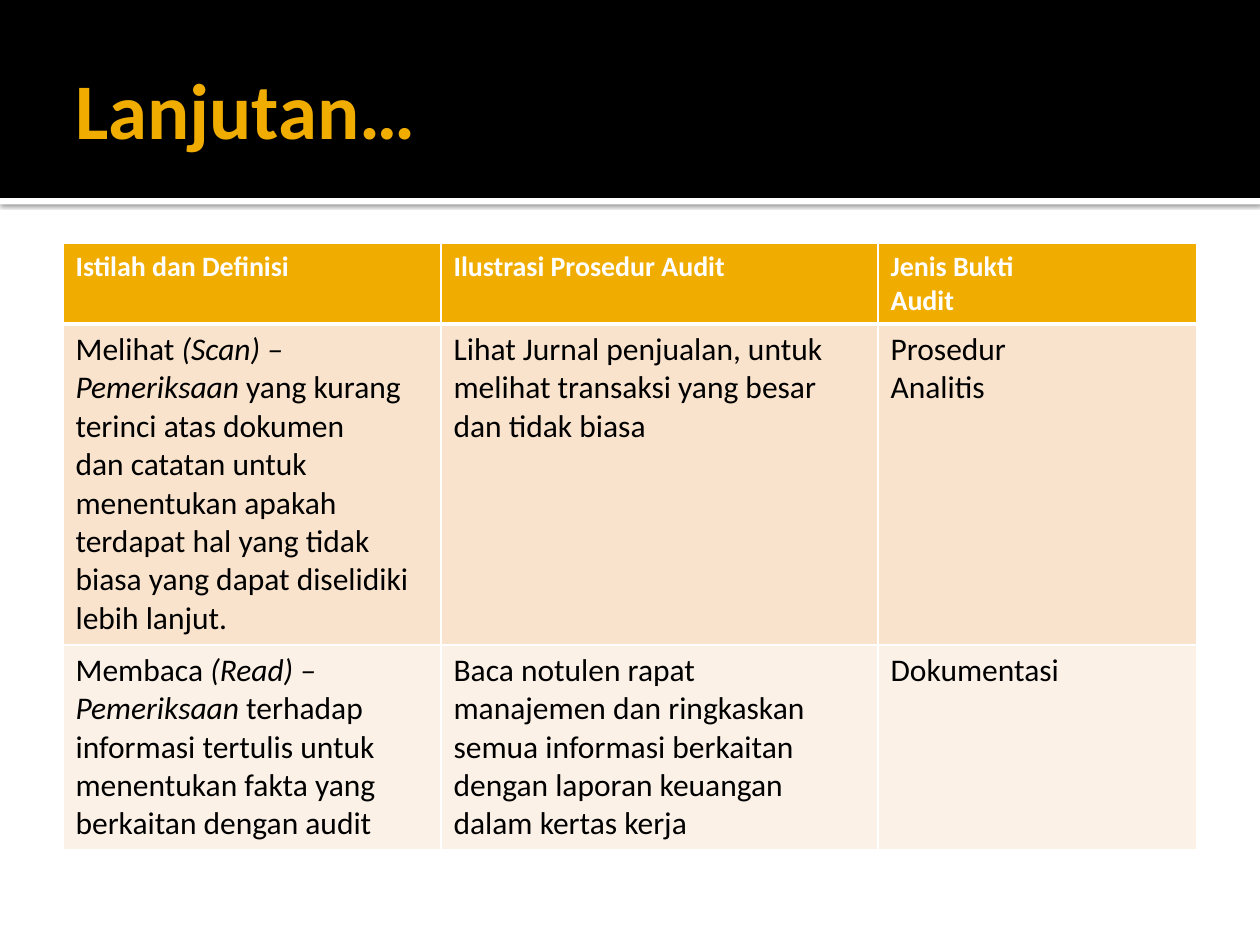
from lxml.etree import SubElement
from pptx import Presentation
from pptx.dml.color import RGBColor as Rgb
from pptx.enum.shapes import MSO_SHAPE as Shape
from pptx.enum.text import MSO_ANCHOR as Anchor
from pptx.oxml import parse_xml
from pptx.oxml.ns import nsdecls, qn
from pptx.util import Cm, Pt

COLORS = {
    "band": "000000",
    "accent": "F0AD00",
    "white": "FFFFFF",
    "text": "000000",
    "row_dark": "F9E3CC",
    "row_light": "FCF1E7",
}
FONT = "Calibri"


def add_bar(top, height, color):
    bar = slide.shapes.add_shape(Shape.RECTANGLE, 0, Cm(top), deck.slide_width, Cm(height))
    bar.shadow.inherit = False
    bar.fill.solid()
    bar.fill.fore_color.rgb = Rgb.from_string(COLORS[color])
    bar.line.fill.background()
    return bar


def style_run(run, size, color, bold=False, italic=False):
    run.font.name = FONT
    run.font.size = Pt(size)
    run.font.bold = bold
    run.font.italic = italic
    run.font.color.rgb = Rgb.from_string(COLORS[color])


deck = Presentation()
deck.slide_width, deck.slide_height = Cm(25.4), Cm(19.05)
slide = deck.slides.add_slide(deck.slide_layouts[6])

divider = add_bar(3.99, 0.13, "white")
effects = divider._element.spPr.find(qn("a:effectLst"))
effects.append(parse_xml(
    f'<a:outerShdw {nsdecls("a")} blurRad="{Pt(2.5)}" dist="{Pt(0.8)}" dir="5400000" '
    'algn="tl" rotWithShape="0"><a:srgbClr val="000000"><a:alpha val="60000"/>'
    '</a:srgbClr></a:outerShdw>'))
add_bar(0, 3.99, "band")

title = slide.shapes.add_textbox(Cm(1.27), Cm(0.43), Cm(22.86), Cm(3.48)).text_frame
title.word_wrap = True
title.vertical_anchor = Anchor.MIDDLE
title.margin_left = Cm(0.25)
title.margin_right = title.margin_top = title.margin_bottom = Cm(0.13)
title.text = "Lanjutan…"
style_run(title.paragraphs[0].runs[0], 45, "accent", bold=True)

# Asterisks enclose italic passages.
audit_rows = [
    ["Istilah dan Definisi", "Ilustrasi Prosedur Audit", "Jenis Bukti\nAudit"],
    [
        "Melihat *(Scan) – Pemeriksaan *yang kurang terinci atas dokumen\n"
        "dan catatan untuk menentukan apakah terdapat hal yang tidak\n"
        "biasa yang dapat diselidiki lebih lanjut.",
        "Lihat Jurnal penjualan, untuk\nmelihat transaksi yang besar\ndan tidak biasa",
        "Prosedur\nAnalitis",
    ],
    [
        "Membaca *(Read) – Pemeriksaan *terhadap informasi tertulis untuk\n"
        "menentukan fakta yang berkaitan dengan audit",
        "Baca notulen rapat\nmanajemen dan ringkaskan\nsemua informasi berkaitan\n"
        "dengan laporan keuangan\ndalam kertas kerja",
        "Dokumentasi",
    ],
]
column_widths = [7.62, 8.81, 6.43]
row_heights = [1.62, 6.47, 4.13]
row_fills = ["accent", "row_dark", "row_light"]

audit_table = slide.shapes.add_table(
    3, 3, Cm(1.27), Cm(4.91), Cm(sum(column_widths)), Cm(sum(row_heights))).table
for column, width in zip(audit_table.columns, column_widths):
    column.width = Cm(width)
for row, height in zip(audit_table.rows, row_heights):
    row.height = Cm(height)

for row_index, entries in enumerate(audit_rows):
    is_header = row_index == 0
    for column_index, entry in enumerate(entries):
        cell = audit_table.cell(row_index, column_index)
        cell.text_frame.text = entry.replace("*", "")
        for paragraph, line in zip(cell.text_frame.paragraphs, entry.split("\n")):
            pieces = line.split("*")
            paragraph.text = pieces[0]
            for piece in pieces[1:]:
                paragraph.add_run().text = piece
            for piece_index, run in enumerate(paragraph.runs):
                style_run(run, 16 if is_header else 18, "white" if is_header else "text",
                          bold=is_header, italic=piece_index == 1)

        cell_properties = cell._tc.get_or_add_tcPr()
        for side in ["L", "R", "T", "B"]:
            heavy = (row_index, side) in [(0, "B"), (1, "T")]
            border = SubElement(cell_properties, qn(f"a:ln{side}"), w=str(Pt(3 if heavy else 1)))
            border_fill = SubElement(border, qn("a:solidFill"))
            SubElement(border_fill, qn("a:srgbClr"), val=COLORS["white"])
        cell.fill.solid()
        cell.fill.fore_color.rgb = Rgb.from_string(COLORS[row_fills[row_index]])

deck.save("out.pptx")
